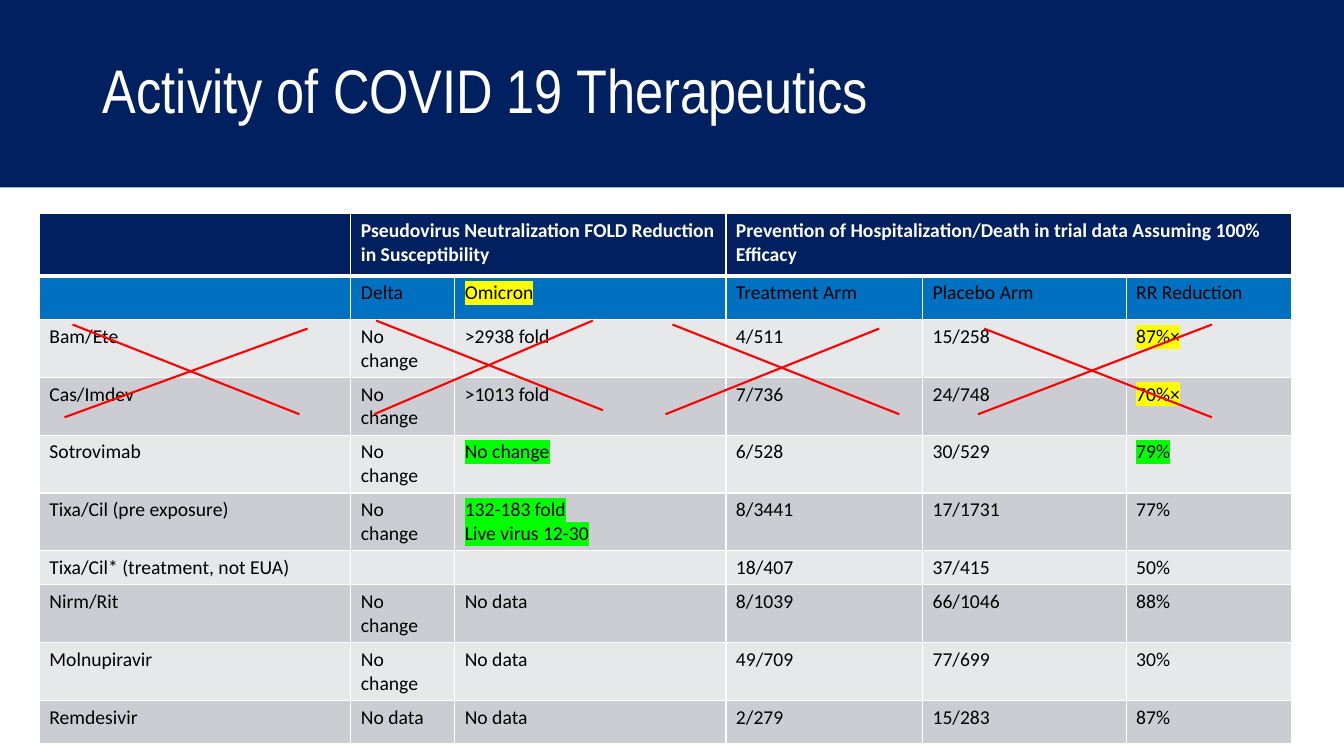
"""Build a slide comparing the activity of COVID 19 therapeutics."""
from lxml import etree
from pptx import Presentation
from pptx.dml.color import RGBColor
from pptx.enum import shapes, text
from pptx.oxml import ns
from pptx.util import Inches, Pt

NAVY, BLUE, WHITE, BLACK, RED = "002060", "0070C0", "FFFFFF", "000000", "FF0000"
YELLOW, GREEN = "FFFF00", "00FF00"
BANDS = ("E7E8EA", "CCCDD2")

COLUMN_WIDTHS = (3.09, 1.03, 2.69, 1.95, 2.02, 1.64)
ROW_HEIGHTS = (0.62, 0.43, 0.53, 0.53, 0.53, 0.53, 0.31, 0.53, 0.53, 0.43)
ROWS = (
    ("", "Pseudovirus Neutralization FOLD Reduction in Susceptibility", "",
     "Prevention of Hospitalization/Death in trial data Assuming 100% Efficacy", "", ""),
    ("", "Delta", "Omicron", "Treatment Arm", "Placebo Arm", "RR Reduction"),
    ("Bam/Ete", "No change", ">2938 fold", "4/511", "15/258", "87%×"),
    ("Cas/Imdev", "No change", ">1013 fold", "7/736", "24/748", "70%×"),
    ("Sotrovimab", "No change", "No change", "6/528", "30/529", "79%"),
    ("Tixa/Cil (pre exposure)", "No change", "132-183 fold\nLive virus 12-30",
     "8/3441", "17/1731", "77%"),
    ("Tixa/Cil* (treatment, not EUA)", "", "", "18/407", "37/415", "50%"),
    ("Nirm/Rit", "No change", "No data", "8/1039", "66/1046", "88%"),
    ("Molnupiravir", "No change", "No data", "49/709", "77/699", "30%"),
    ("Remdesivir", "No data", "No data", "2/279", "15/283", "87%"),
)
HIGHLIGHTS = {(1, 2): YELLOW, (2, 5): YELLOW, (3, 5): YELLOW,
              (4, 2): GREEN, (4, 5): GREEN, (5, 2): GREEN}
STRIKES = (
    (0.72, 3.22, 2.97, 4.11), (3.73, 3.18, 5.98, 4.07),
    (6.67, 3.22, 8.92, 4.11), (9.76, 3.26, 12.02, 4.14),
    (0.64, 4.14, 3.05, 3.26), (9.7, 4.11, 12.02, 3.22),
    (6.6, 4.11, 8.72, 3.26), (3.71, 4.11, 5.88, 3.18),
)


def color(value):
    return RGBColor.from_string(value)


def add_band(slide):
    band = slide.shapes.add_shape(shapes.MSO_SHAPE.RECTANGLE, 0, 0, Inches(13.33), Inches(1.86))
    band.shadow.inherit = False
    band.fill.solid()
    band.fill.fore_color.rgb = color(NAVY)
    band.line.fill.background()
    slide.shapes._spTree.insert(2, band._element)


def set_title(slide, wording):
    title = slide.shapes.title
    title.left, title.top = Inches(0.92), Inches(0)
    title.width, title.height = Inches(8.44), Inches(1.85)
    frame = title.text_frame
    frame.text = wording
    frame.word_wrap = True
    frame.auto_size = text.MSO_AUTO_SIZE.NONE
    frame.vertical_anchor = text.MSO_ANCHOR.MIDDLE
    paragraph = frame.paragraphs[0]
    paragraph.alignment = text.PP_ALIGN.LEFT
    paragraph.line_spacing = 0.9
    paragraph.font.name = "Arial Narrow"
    paragraph.font.size = Pt(44)
    paragraph.font.color.rgb = color(WHITE)


def add_solid_fill(parent, value, tag="a:solidFill"):
    fill = etree.SubElement(parent, ns.qn(tag))
    etree.SubElement(fill, ns.qn("a:srgbClr"), val=value)
    return fill


def set_borders(cell, top, bottom):
    properties = cell._tc.get_or_add_tcPr()
    for index, (side, points) in enumerate((("L", 1), ("R", 1), ("T", top), ("B", bottom))):
        line = etree.Element(ns.qn(f"a:ln{side}"), w=str(Pt(points)))
        add_solid_fill(line, WHITE)
        properties.insert(index, line)


def fill_cell(cell, wording, background, font_color, bold, highlight):
    cell.fill.solid()
    cell.fill.fore_color.rgb = color(background)
    cell.text = wording
    for paragraph in cell.text_frame.paragraphs:
        font = paragraph.font
        font.name, font.size, font.bold = "Calibri", Pt(14), bold
        font.color.rgb = color(font_color)
        if not wording:
            etree.SubElement(paragraph._p, ns.qn("a:endParaRPr"), sz="1400")
        if highlight:
            for run in paragraph.runs:
                add_solid_fill(run._r.get_or_add_rPr(), highlight, "a:highlight")


def add_therapeutics_table(slide):
    frame = slide.shapes.add_table(len(ROWS), len(COLUMN_WIDTHS), Inches(0.39), Inches(2.12),
                                   Inches(sum(COLUMN_WIDTHS)), Inches(sum(ROW_HEIGHTS)))
    table = frame.table
    for column, width in zip(table.columns, COLUMN_WIDTHS):
        column.width = Inches(width)
    for row, height in zip(table.rows, ROW_HEIGHTS):
        row.height = Inches(height)
    for r, row in enumerate(ROWS):
        header = r == 0
        background = (NAVY, BLUE)[r] if r < 2 else BANDS[r % 2]
        for c, wording in enumerate(row):
            cell = table.cell(r, c)
            fill_cell(cell, wording, background, WHITE if header else BLACK,
                      header, HIGHLIGHTS.get((r, c)))
            set_borders(cell, 3 if r == 1 else 1, 3 if header else 1)
    table.cell(0, 1).merge(table.cell(0, 2))
    table.cell(0, 3).merge(table.cell(0, 5))


def add_strike(slide, ends):
    strike = slide.shapes.add_connector(shapes.MSO_CONNECTOR.STRAIGHT, *map(Inches, ends))
    strike.line.color.rgb = color(RED)
    strike.line.width = Pt(1.5)
    etree.SubElement(strike._element.spPr, ns.qn("a:effectLst"))


def main():
    presentation = Presentation()
    presentation.slide_width, presentation.slide_height = Inches(13.33), Inches(7.5)
    slide = presentation.slides.add_slide(presentation.slide_layouts[5])
    add_band(slide)
    set_title(slide, "Activity of COVID 19 Therapeutics")
    add_therapeutics_table(slide)
    for ends in STRIKES:
        add_strike(slide, ends)
    presentation.save("out.pptx")


if __name__ == "__main__":
    main()
